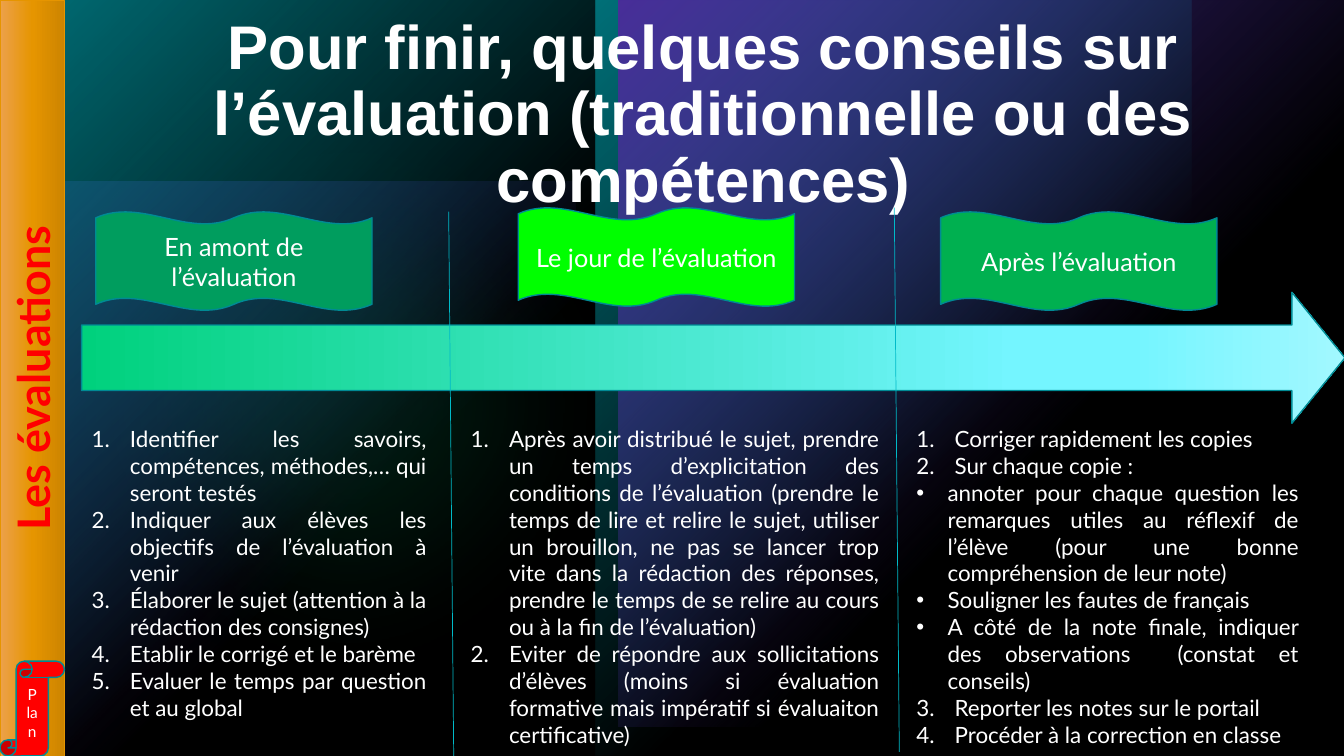
"""Build the slide of advice on assessments: before, during and after."""
from lxml.etree import SubElement
from pptx import Presentation
from pptx.dml.color import RGBColor
from pptx.enum.shapes import MSO_CONNECTOR, MSO_SHAPE as SHAPE
from pptx.enum.text import MSO_ANCHOR as ANCHOR, PP_ALIGN as ALIGN
from pptx.oxml import parse_xml
from pptx.oxml.ns import nsdecls, qn
from pptx.util import Inches, Pt

COLORS = {"black": "000000", "white": "FFFFFF", "red": "FF0000", "teal": "00BAC8",
          "edge": "008A94", "purple": "794DFF", "green": "00D17D", "orange": "E69500",
          "before": "009D5E", "during": "00FF00", "after": "00B050"}
TITLE = "Pour finir, quelques conseils sur l’évaluation (traditionnelle ou des compétences)"
SIDE, PLAN = "Les évaluations", "Plan"
BULLET = "•"
BANNERS = [("En amont de l’évaluation", "before", 2.1),
           ("Le jour de l’évaluation", "during", 2.06),
           ("Après l’évaluation", "after", 2.1)]
DIVIDER_TOPS = [2.1, 2.06]
COLUMNS = [
    (0.81, 3.52, 3.06, [
        (1, "Identifier les savoirs, compétences, méthodes,… qui seront testés"),
        (1, "Indiquer aux élèves les objectifs de l’évaluation à venir"),
        (1, "Élaborer le sujet (attention à la rédaction des consignes)"),
        (1, "Etablir le corrigé et le barème"),
        (1, "Evaluer le temps par question et au global")]),
    (4.57, 4.25, 3.33, [
        (1, "Après avoir distribué le sujet, prendre un temps d’explicitation des conditions "
            "de l’évaluation (prendre le temps de lire et relire le sujet, utiliser un "
            "brouillon, ne pas se lancer trop vite dans la rédaction des réponses, prendre "
            "le temps de se relire au cours ou à la fin de l’évaluation)"),
        (1, "Eviter de répondre aux sollicitations d’élèves (moins si évaluation formative "
            "mais impératif si évaluaiton certificative)")]),
    (8.99, 3.99, 3.33, [
        (1, "Corriger rapidement les copies"),
        (1, "Sur chaque copie : "),
        (BULLET, "annoter pour chaque question les remarques utiles au réflexif de l’élève "
                 "(pour une bonne compréhension de leur note)"),
        (BULLET, "Souligner les fautes de français"),
        (BULLET, "A côté de la note finale, indiquer des observations  (constat et conseils)"),
        (3, "Reporter les notes sur le portail"),
        (3, "Procéder à la correction en classe")])]
GLOWS = [("purple", 60, (0, 1.8, 5.71, 5.71), 0, "V"),
         ("teal", 100, (0, 0, 5.91, 7.5), 180, "V"),
         ("teal", 100, (5.91, 0, 5.91, 7.5), 180, "HV"),
         ("purple", 100, (6.13, 0, 7.21, 7.21), 180, "V")]
SPOTS = [(60, (6.29, 0.43, 4.72, 4.72), 2.2), (20, (0, 0.56, 6.94, 6.94), 1.39)]
SIDE_STOPS = [(0, "ECA14B", 100), (50, "E69500", 100), (100, "CC8400", 100)]
ARROW_STOPS = [(0, "00D17D", 100), (74, "74F5FF", 100), (83, "74F5FF", 100),
               (100, "A2F8FF", 100)]


def rgb(name):
    return RGBColor.from_string(COLORS[name])


def add_shape(kind, box, fill=None, line=None, width=1, alpha=100):
    sp = slide.shapes.add_shape(kind, *map(Inches, box))
    sp.shadow.inherit = False
    if fill:
        sp.fill.solid()
        sp.fill.fore_color.rgb = rgb(fill)
        if alpha < 100:
            clr = sp._element.spPr.find(".//" + qn("a:srgbClr"))
            SubElement(clr, qn("a:alpha"), val=str(alpha * 1000))
    if line:
        sp.line.color.rgb = rgb(line)
        sp.line.width = Pt(width)
    else:
        sp.line.fill.background()
    return sp


def add_gradient(sp, stops, angle=None):
    gs = "".join(f'<a:gs pos="{pos * 1000}"><a:srgbClr val="{color}">'
                 f'<a:alpha val="{alpha * 1000}"/></a:srgbClr></a:gs>'
                 for pos, color, alpha in stops)
    if angle is None:
        way = '<a:path path="circle"><a:fillToRect r="100000" b="100000"/></a:path>'
    else:
        way = f'<a:lin ang="{angle * 60000}" scaled="0"/>'
    geom = sp._element.spPr.find(qn("a:prstGeom"))
    geom.addnext(parse_xml(f'<a:gradFill {nsdecls("a")} rotWithShape="1">'
                           f'<a:gsLst>{gs}</a:gsLst>{way}</a:gradFill>'))


def style(p, size, color="white", font="Lato", bold=False, align=ALIGN.CENTER):
    p.alignment = align
    for r in p.runs:
        r.font.size, r.font.name, r.font.bold = Pt(size), font, bold
        r.font.color.rgb = rgb(color)


def add_label(sp, text, size, **look):
    tf = sp.text_frame
    tf.text, tf.word_wrap, tf.vertical_anchor = text, True, ANCHOR.MIDDLE
    style(tf.paragraphs[0], size, **look)


def set_bullet(p, mark):
    pPr = p._p.get_or_add_pPr()
    indent = Inches(0.31 if mark == BULLET else 0.38)
    pPr.set("marL", str(indent))
    pPr.set("indent", str(-indent))
    if mark == BULLET:
        SubElement(pPr, qn("a:buFont"), typeface="Arial")
        SubElement(pPr, qn("a:buChar"), char=BULLET)
    else:
        SubElement(pPr, qn("a:buFont"), typeface="+mj-lt")
        SubElement(pPr, qn("a:buAutoNum"), type="arabicPeriod", startAt=str(mark))


def add_glow(color, alpha, box, rotation, flips):
    sp = add_shape(SHAPE.RECTANGLE, box)
    add_gradient(sp, [(0, COLORS[color], alpha), (60, COLORS[color], 0)])
    sp.rotation = rotation
    for axis in flips:
        sp._element.spPr.xfrm.set("flip" + axis, "1")


def add_spot(alpha, box, soft):
    sp = add_shape(SHAPE.OVAL, box, "green", alpha=alpha)
    effects = sp._element.spPr.find(qn("a:effectLst"))
    SubElement(effects, qn("a:softEdge"), rad=str(Inches(soft)))


prs = Presentation()
prs.slide_width, prs.slide_height = Inches(13.33), Inches(7.5)
slide = prs.slides.add_slide(prs.slide_layouts[5])
slide.background.fill.solid()
slide.background.fill.fore_color.rgb = rgb("black")

add_glow(*GLOWS[0])
for spot in SPOTS:
    add_spot(*spot)
for glow in GLOWS[1:]:
    add_glow(*glow)
add_shape(SHAPE.RECTANGLE, (0, 0, 13.33, 7.5), "black", alpha=40)

side = add_shape(SHAPE.RECTANGLE, (-3.43, 3.43, 7.5, 0.64), line="orange", width=0.5)
add_gradient(side, SIDE_STOPS, 90)
side.rotation = 270
add_label(side, SIDE, 32, color="red", bold=True)

scroll = add_shape(SHAPE.VERTICAL_SCROLL, (0, 6.56, 0.64, 0.94), "red", "edge")
scroll.adjustments[0] = 0.25
add_label(scroll, PLAN, 11)

title = slide.shapes.title
title.left, title.top, title.width, title.height = map(Inches, (0.81, 0.11, 12.34, 1.45))
add_label(title, TITLE, 44, font="Arial", bold=True)
title.text_frame.vertical_anchor = ANCHOR.TOP
title.text_frame.paragraphs[0].line_spacing = 0.9
slide.shapes._spTree.append(title._element)

arrow = add_shape(SHAPE.RIGHT_ARROW, (0.81, 2.9, 12.53, 1.3), line="edge")
arrow.adjustments[0], arrow.adjustments[1] = 0.5, 0.405
add_gradient(arrow, ARROW_STOPS, 0)

for i, top in enumerate(DIVIDER_TOPS):
    x = 4.45 + 4.42 * i
    line = slide.shapes.add_connector(MSO_CONNECTOR.STRAIGHT, Inches(x), Inches(top),
                                      Inches(x + 0.05), Inches(top + 5.4))
    line.line.color.rgb, line.line.width = rgb("teal"), Pt(0.5)
    SubElement(line._element.spPr, qn("a:effectLst"))

for i, (text, color, top) in enumerate(BANNERS):
    box = (0.95 + 4.19 * i, top, 2.74, 0.98)
    add_label(add_shape(SHAPE.DOUBLE_WAVE, box, color, "edge"), text, 18)

for left, width, height, items in COLUMNS:
    tf = slide.shapes.add_textbox(*map(Inches, (left, 4.17, width, height))).text_frame
    tf.word_wrap = True
    tf.text = "\n".join(text for _, text in items)
    for p, (mark, _) in zip(tf.paragraphs, items):
        style(p, 16, align=ALIGN.JUSTIFY)
        set_bullet(p, mark)

prs.save("out.pptx")
